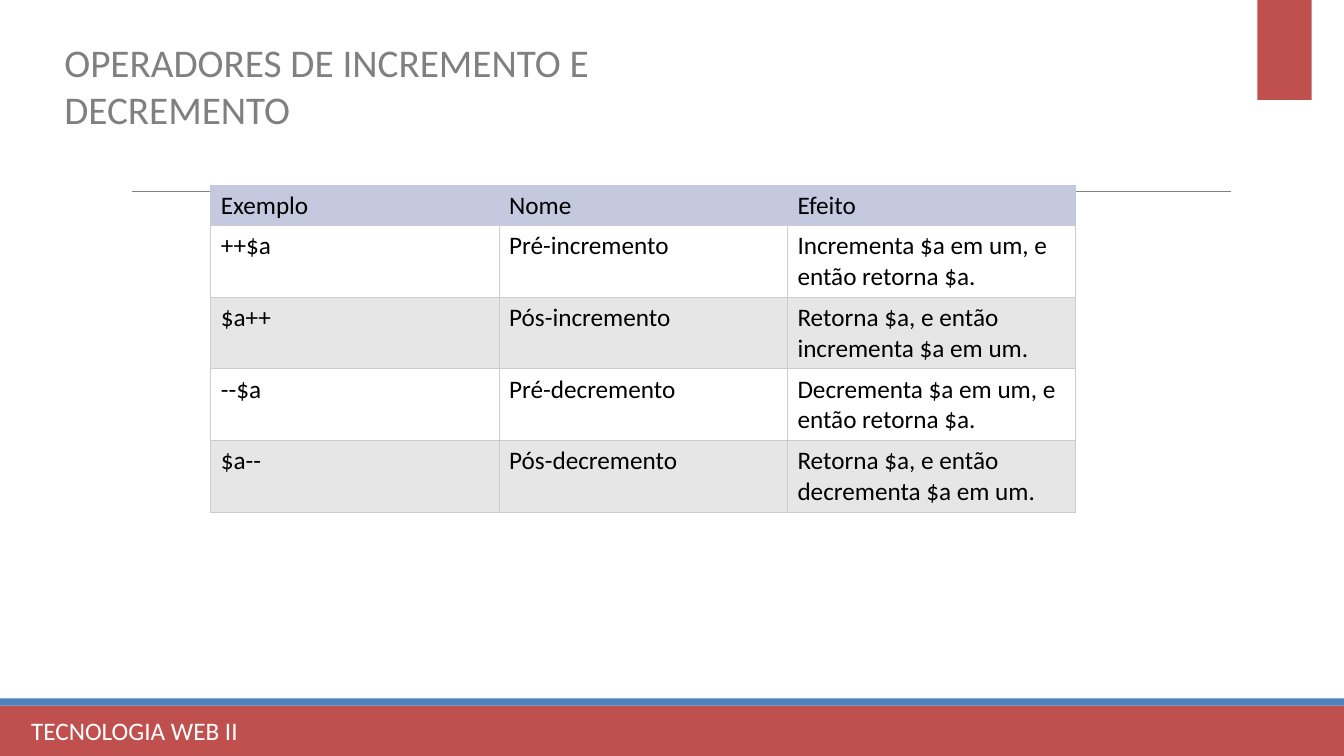
from dataclasses import dataclass

from lxml.etree import SubElement
from pptx import Presentation
from pptx.dml.color import RGBColor
from pptx.enum.shapes import MSO_CONNECTOR, MSO_SHAPE
from pptx.oxml.ns import qn
from pptx.slide import Slide
from pptx.table import _Cell
from pptx.text.text import TextFrame
from pptx.util import Inches, Pt


@dataclass(frozen=True)
class Theme:
    font: str = "Calibri"
    title_size: int = 28
    body_size: int = 18
    red: str = "C0504D"
    blue: str = "4F81BD"
    gray: str = "808080"
    white: str = "FFFFFF"
    black: str = "000000"
    header: str = "C4C9DF"
    band: str = "E6E6E6"
    border: str = "CCCCCC"
    border_width: float = 0.75


@dataclass(frozen=True)
class Box:
    left: float
    top: float
    width: float
    height: float


@dataclass(frozen=True)
class Bar:
    box: Box
    color: str


@dataclass(frozen=True)
class Label:
    box: Box
    text: str
    size: int
    color: str
    wrap: bool


THEME = Theme()
BARS = [
    Bar(Box(0, 7, 13.33, 0.5), THEME.red),
    Bar(Box(0, 6.93, 13.33, 0.07), THEME.blue),
    Bar(Box(12.47, 0, 0.54, 0.99), THEME.red),
]
LABELS = [
    Label(Box(0.21, 7.05, 7.11, 0.4), "TECNOLOGIA WEB II",
          THEME.body_size, THEME.white, True),
    Label(Box(0.54, 0.33, 7.66, 0.57), "OPERADORES DE INCREMENTO E DECREMENTO",
          THEME.title_size, THEME.gray, False),
]
OPERATORS = [
    ("Exemplo", "Nome", "Efeito"),
    ("++$a", "Pré-incremento", "Incrementa $a em um, e então retorna $a."),
    ("$a++", "Pós-incremento", "Retorna $a, e então incrementa $a em um."),
    ("--$a", "Pré-decremento", "Decrementa $a em um, e então retorna $a."),
    ("$a--", "Pós-decremento", "Retorna $a, e então decrementa $a em um."),
]
TABLE_LEFT, TABLE_TOP = 2.09, 1.84
COLUMN_WIDTH = 2.86
HEADER_HEIGHT, ROW_HEIGHT = 0.4, 0.71


def write_text(frame: TextFrame, text: str, size: int, color: str) -> None:
    run = frame.paragraphs[0].add_run()
    run.text = text
    run.font.name = THEME.font
    run.font.size = Pt(size)
    run.font.color.rgb = RGBColor.from_string(color)


def add_rule(slide: Slide) -> None:
    rule = slide.shapes.add_connector(
        MSO_CONNECTOR.STRAIGHT, Inches(1.31), Inches(1.9), Inches(12.21), Inches(1.9))
    rule.line.color.rgb = RGBColor.from_string(THEME.gray)
    rule.line.width = Pt(0.5)
    SubElement(rule.element.spPr, qn("a:effectLst"))


def add_bar(slide: Slide, bar: Bar) -> None:
    box = bar.box
    shape = slide.shapes.add_shape(
        MSO_SHAPE.RECTANGLE, Inches(box.left), Inches(box.top),
        Inches(box.width), Inches(box.height))
    shape.shadow.inherit = False
    shape.fill.solid()
    shape.fill.fore_color.rgb = RGBColor.from_string(bar.color)
    shape.line.fill.background()


def add_label(slide: Slide, label: Label) -> None:
    box = label.box
    shape = slide.shapes.add_textbox(
        Inches(box.left), Inches(box.top), Inches(box.width), Inches(box.height))
    shape.text_frame.word_wrap = label.wrap
    write_text(shape.text_frame, label.text, label.size, label.color)


def style_cell(cell: _Cell, fill: str, edge: str) -> None:
    properties = cell._tc.get_or_add_tcPr()
    for side, color in (("L", edge), ("R", edge), ("T", edge), ("B", THEME.border)):
        line = SubElement(properties, qn(f"a:ln{side}"), w=str(Pt(THEME.border_width)))
        solid = SubElement(line, qn("a:solidFill"))
        SubElement(solid, qn("a:srgbClr"), val=color)
    cell.fill.solid()
    cell.fill.fore_color.rgb = RGBColor.from_string(fill)


def add_operator_table(slide: Slide) -> None:
    columns = len(OPERATORS[0])
    heights = [HEADER_HEIGHT] + [ROW_HEIGHT] * (len(OPERATORS) - 1)
    table = slide.shapes.add_table(
        len(OPERATORS), columns, Inches(TABLE_LEFT), Inches(TABLE_TOP),
        Inches(columns * COLUMN_WIDTH), Inches(sum(heights))).table
    for column in table.columns:
        column.width = Inches(COLUMN_WIDTH)
    for index, (height, texts) in enumerate(zip(heights, OPERATORS)):
        table.rows[index].height = Inches(height)
        if index == 0:
            fill, edge = THEME.header, THEME.header
        else:
            fill, edge = (THEME.white if index % 2 else THEME.band), THEME.border
        for cell, text in zip(table.rows[index].cells, texts):
            style_cell(cell, fill, edge)
            write_text(cell.text_frame, text, THEME.body_size, THEME.black)


def main() -> None:
    presentation = Presentation()
    presentation.slide_width = Inches(13.33)
    presentation.slide_height = Inches(7.5)
    slide = presentation.slides.add_slide(presentation.slide_layouts[6])
    add_rule(slide)
    for bar in BARS:
        add_bar(slide, bar)
    for label in LABELS:
        add_label(slide, label)
    add_operator_table(slide)
    presentation.save("out.pptx")


if __name__ == "__main__":
    main()
